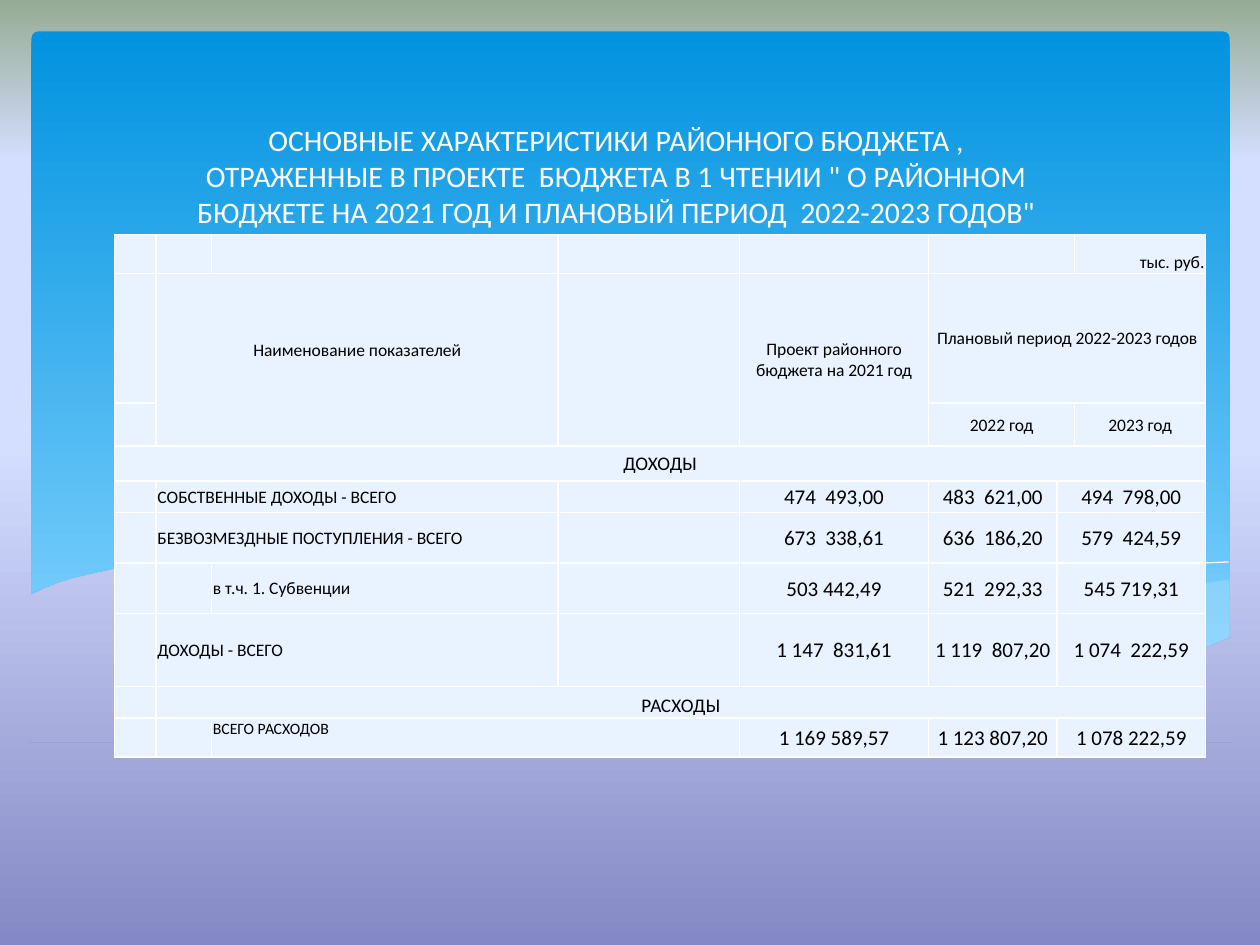
import copy

import pptx
import pptx.dml.color
import pptx.enum.shapes
import pptx.enum.text
import pptx.oxml
import pptx.oxml.ns
import pptx.util
from pptx.util import Inches

COLOURS = {
    "white": "FFFFFF", "black": "000000", "cell": "E8F3FF", "pale": "C6E7FC",
    "panel_top": "0293E0", "panel_bottom": "83D3FE",
    "violet": "8488C4", "lavender": "D4DEFF", "sage": "96AB94",
}
FONT = "Calibri"
ALIGN = pptx.enum.text.PP_ALIGN
ANCHOR = pptx.enum.text.MSO_ANCHOR

TITLE = ('ОСНОВНЫЕ ХАРАКТЕРИСТИКИ РАЙОННОГО БЮДЖЕТА , ОТРАЖЕННЫЕ В ПРОЕКТЕ  БЮДЖЕТА '
         'В 1 ЧТЕНИИ " О РАЙОННОМ БЮДЖЕТЕ НА 2021 ГОД И ПЛАНОВЫЙ ПЕРИОД  2022-2023 ГОДОВ"')

RIGHT_SWELL = [
    (975, 460), (948, 464), (921, 470), (891, 476), (861, 483), (805, 497), (753, 508),
    (706, 518), (661, 525), (691, 530), (719, 533), (745, 535), (781, 537), (814, 538),
    (844, 537), (872, 534), (897, 530), (921, 526), (942, 519), (963, 512), (976, 507), (976, 460)]
MIDDLE_SWELL = [
    (893, 533), (866, 529), (807, 520), (741, 508), (668, 491), (613, 478), (569, 468),
    (528, 460), (489, 454), (442, 449), (399, 446), (361, 446), (328, 447), (286, 452),
    (323, 456), (362, 463), (404, 471), (449, 482), (530, 501), (584, 512), (634, 521),
    (680, 528), (722, 534), (761, 537), (796, 539), (838, 538), (867, 536)]
LEFT_CREST = [
    (309, 456), (328, 452), (353, 449), (387, 448), (433, 447), (469, 449), (510, 452),
    (556, 457), (608, 464), (665, 473), (727, 486), (795, 502), (869, 521), (907, 532)]
RIGHT_CREST = [
    (613, 517), (653, 506), (695, 496), (748, 483), (806, 470), (866, 459), (895, 454),
    (924, 450), (951, 447), (975, 446)]
WAVE = [
    (977, 506), (950, 517), (920, 525), (887, 531), (850, 535), (809, 537), (761, 535),
    (708, 530), (648, 522), (579, 510), (503, 493), (447, 480), (391, 467), (340, 458),
    (292, 451), (250, 446), (211, 444), (177, 444), (146, 445), (119, 448), (95, 451),
    (76, 455), (59, 459), (46, 463), (36, 467), (23, 473), (23, 589), (977, 589)]

COLUMN_WIDTHS = [0.33, 0.44, 2.75, 1.44, 1.5, 1.02, 0.14, 1.04]
ROW_HEIGHTS = [0.31, 1.03, 0.34, 0.28, 0.25, 0.4, 0.4, 0.58, 0.25, 0.31]
MERGES = [
    (0, 5, 0, 6), (1, 1, 2, 2), (1, 3, 2, 3), (1, 4, 2, 4), (1, 5, 1, 7), (2, 5, 2, 6),
    (3, 0, 3, 7), (4, 1, 4, 2), (5, 1, 5, 2), (7, 1, 7, 2), (8, 1, 8, 7), (9, 2, 9, 3),
] + [(row, 6, row, 7) for row in (4, 5, 6, 7, 9)]
LABELS = [
    (0, 7, "тыс. руб.", 10, ALIGN.RIGHT, ANCHOR.BOTTOM),
    (1, 1, "Наименование показателей", 10, ALIGN.CENTER, ANCHOR.MIDDLE),
    (1, 4, "Проект районного бюджета на 2021 год", 10, ALIGN.CENTER, ANCHOR.MIDDLE),
    (1, 5, "Плановый период 2022-2023 годов", 10, ALIGN.CENTER, ANCHOR.MIDDLE),
    (2, 5, "2022 год", 10, ALIGN.CENTER, ANCHOR.MIDDLE),
    (2, 7, "2023 год", 10, ALIGN.CENTER, ANCHOR.MIDDLE),
    (3, 0, "ДОХОДЫ", 11, ALIGN.CENTER, ANCHOR.MIDDLE),
    (4, 1, "СОБСТВЕННЫЕ ДОХОДЫ - ВСЕГО", 10, ALIGN.LEFT, ANCHOR.MIDDLE),
    (5, 1, "БЕЗВОЗМЕЗДНЫЕ ПОСТУПЛЕНИЯ - ВСЕГО", 10, ALIGN.LEFT, ANCHOR.MIDDLE),
    (6, 2, "в т.ч. 1. Субвенции", 10, ALIGN.LEFT, ANCHOR.MIDDLE),
    (7, 1, "ДОХОДЫ - ВСЕГО", 10, ALIGN.LEFT, ANCHOR.MIDDLE),
    (8, 1, "РАСХОДЫ", 11, ALIGN.CENTER, ANCHOR.BOTTOM),
    (9, 2, "ВСЕГО РАСХОДОВ", 9, ALIGN.LEFT, ANCHOR.TOP),
]
AMOUNTS = {
    4: ("474  493,00", "483  621,00", "494  798,00"),
    5: ("673  338,61", "636  186,20", "579  424,59"),
    6: ("503 442,49", "521  292,33", "545 719,31"),
    7: ("1 147  831,61", "1 119  807,20", "1 074  222,59"),
    9: ("1 169 589,57", "1 123 807,20", "1 078 222,59"),
}


def colour(name):
    """Return the named colour."""
    return pptx.dml.color.RGBColor.from_string(COLOURS[name])


def set_gradient(fill, stops, angle):
    """Give a fill a linear gradient of (position, colour) stops."""
    fill.gradient()
    fill.gradient_angle = angle
    stop_list = fill.gradient_stops[0]._gs.getparent()
    for _ in range(len(stops) - 2):
        stop_list.append(copy.deepcopy(stop_list[0]))
    for stop, (position, name) in zip(fill.gradient_stops, stops):
        stop.position = position
        stop.color.rgb = colour(name)


def add_panel(page):
    """Draw the blue rounded panel."""
    panel = page.shapes.add_shape(pptx.enum.shapes.MSO_SHAPE.ROUNDED_RECTANGLE,
                                  Inches(0.25), Inches(0.25), Inches(9.51), Inches(5.18))
    panel.adjustments[0] = 0.01
    panel.shadow.inherit = False
    panel.line.fill.background()
    set_gradient(panel.fill, [(0, "panel_top"), (1, "panel_bottom")], 270)


def add_outline(page, points, close=True):
    """Draw a freeform through points given in hundredths of an inch."""
    builder = page.shapes.build_freeform(*points[0], scale=Inches(0.01))
    builder.add_line_segments(points[1:], close=close)
    outline = builder.convert_to_shape()
    outline.shadow.inherit = False
    outline.line.fill.background()
    return outline


def add_swell(page, points, opacity):
    """Draw a translucent pale swell."""
    swell = add_outline(page, points)
    swell.fill.solid()
    swell.fill.fore_color.rgb = colour("pale")
    tint = swell._element.spPr.find(".//" + pptx.oxml.ns.qn("a:srgbClr"))
    tint.append(pptx.oxml.parse_xml(
        f'<a:alpha {pptx.oxml.ns.nsdecls("a")} val="{opacity * 1000}"/>'))


def add_crest(page, points):
    """Draw a white hairline curve."""
    crest = add_outline(page, points, close=False)
    crest.fill.background()
    crest.line.color.rgb = colour("white")
    crest.line.width = pptx.util.Pt(0)


def format_text(frame, text, size, name, align):
    """Write one paragraph and format it."""
    frame.text = text
    paragraph = frame.paragraphs[0]
    paragraph.alignment = align
    for span in paragraph.runs:
        span.font.name = FONT
        span.font.size = pptx.util.Pt(size)
        span.font.color.rgb = colour(name)


def add_title(page):
    """Write the title above the table."""
    box = page.shapes.add_textbox(Inches(1.38), Inches(0.84), Inches(7.02), Inches(1.03))
    box.text_frame.word_wrap = True
    box.text_frame.vertical_anchor = ANCHOR.BOTTOM
    format_text(box.text_frame, TITLE, 17, "white", ALIGN.CENTER)


def style_cell(cell):
    """Fill a cell, tighten its margins and draw its white borders."""
    cell.margin_left = cell.margin_right = cell.margin_top = Inches(0.01)
    cell.margin_bottom = 0
    cell.text_frame.paragraphs[0]._p.get_or_add_endParaRPr().set("sz", "800")
    properties = cell._tc.get_or_add_tcPr()
    for side in ("lnL", "lnR", "lnT", "lnB"):
        properties.append(pptx.oxml.parse_xml(
            f'<a:{side} {pptx.oxml.ns.nsdecls("a")} w="12700"><a:solidFill>'
            f'<a:srgbClr val="{COLOURS["white"]}"/></a:solidFill></a:{side}>'))
    cell.fill.solid()
    cell.fill.fore_color.rgb = colour("cell")


def add_budget_table(page):
    """Build the budget table."""
    table = page.shapes.add_table(len(ROW_HEIGHTS), len(COLUMN_WIDTHS), Inches(0.91), Inches(1.86),
                                  Inches(sum(COLUMN_WIDTHS)), Inches(sum(ROW_HEIGHTS))).table
    table.first_row = table.horz_banding = False
    for column, width in zip(table.columns, COLUMN_WIDTHS):
        column.width = Inches(width)
    for row, height in zip(table.rows, ROW_HEIGHTS):
        row.height = Inches(height)
    for cell in table.iter_cells():
        style_cell(cell)
    for top, left, bottom, right in MERGES:
        table.cell(top, left).merge(table.cell(bottom, right))
    figures = [(row, column, amount, 12, ALIGN.CENTER, ANCHOR.MIDDLE)
               for row, amounts in AMOUNTS.items() for column, amount in enumerate(amounts, 4)]
    for row, column, text, size, align, anchor in LABELS + figures:
        cell = table.cell(row, column)
        cell.vertical_anchor = anchor
        format_text(cell.text_frame, text, size, "black", align)
    table.cell(1, 1).margin_bottom = Inches(0.16)


def main():
    """Build the budget slide."""
    deck = pptx.Presentation()
    deck.slide_width, deck.slide_height = Inches(10), Inches(7.5)
    page = deck.slides.add_slide(deck.slide_layouts[6])
    set_gradient(page.background.fill, [(0, "violet"), (0.53, "lavender"),
                                        (0.83, "lavender"), (1, "sage")], 90)
    add_panel(page)
    add_swell(page, RIGHT_SWELL, 29)
    add_swell(page, MIDDLE_SWELL, 40)
    add_crest(page, LEFT_CREST)
    add_crest(page, RIGHT_CREST)
    add_outline(page, WAVE)._element.set("useBgFill", "1")
    add_title(page)
    add_budget_table(page)
    deck.save("out.pptx")


if __name__ == "__main__":
    main()
